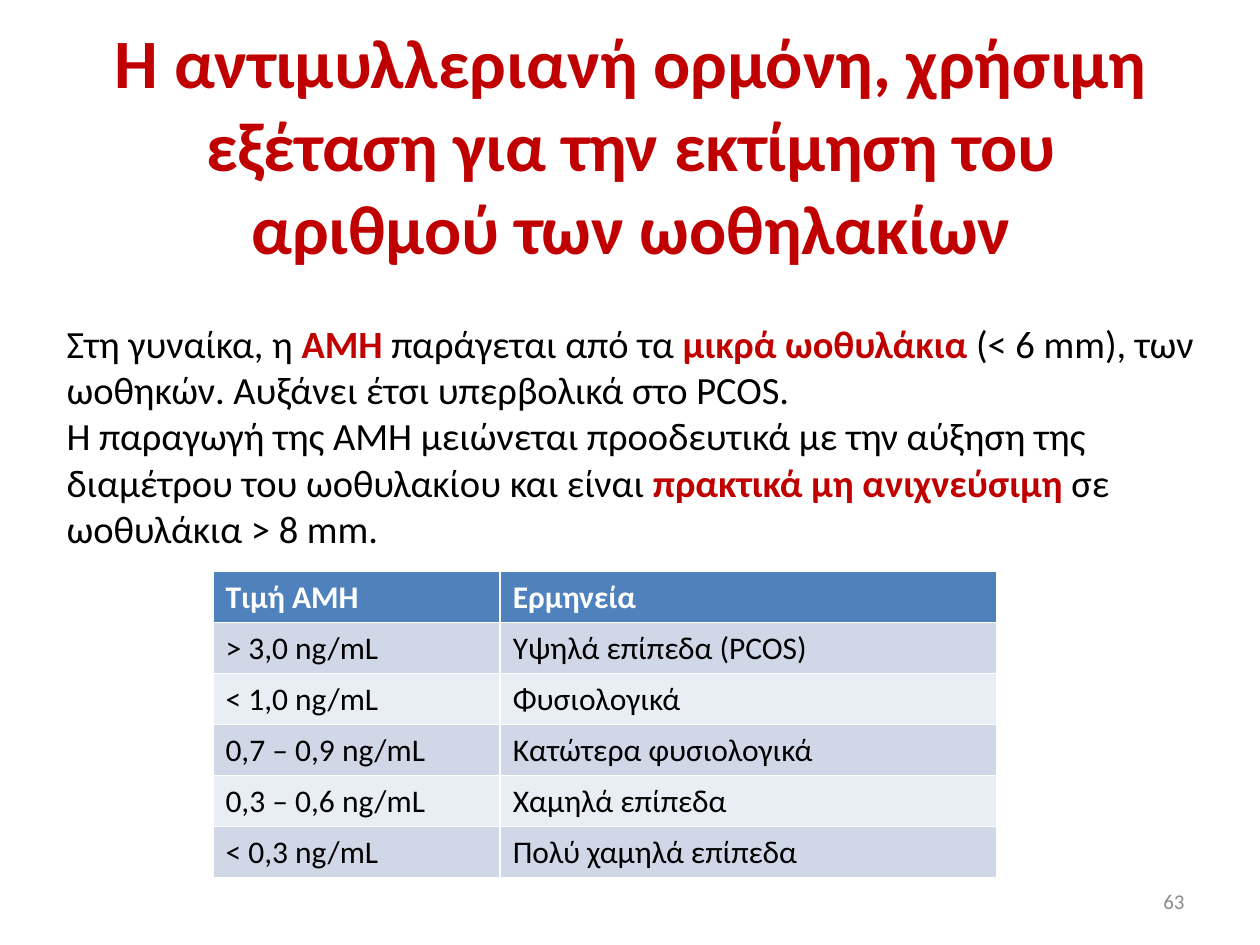
"""Builds the slide on anti-Müllerian hormone values and their meaning."""
from pptx import Presentation, util as u
from pptx.dml.color import RGBColor
from pptx.enum import text

RED = RGBColor(0xC0, 0x00, 0x00)
BLACK = RGBColor(0x00, 0x00, 0x00)
WHITE = RGBColor(0xFF, 0xFF, 0xFF)
GREY = RGBColor(0x8C, 0x8C, 0x8C)
HEADER = RGBColor(0x4F, 0x81, 0xBD)
BANDS = [RGBColor(0xE9, 0xED, 0xF4), RGBColor(0xD0, 0xD8, 0xE8)]

prs = Presentation()
prs.slide_width, prs.slide_height = u.Inches(10), u.Inches(7.5)
W, H = prs.slide_width, prs.slide_height
s = prs.slides.add_slide(prs.slide_layouts[6])


def add_run(p, words, size, color, bold=False):
    r = p.add_run()
    r.text = words
    for name, value in {"name": "Calibri", "size": u.Pt(size), "bold": bold}.items():
        setattr(r.font, name, value)
    r.font.color.rgb = color


def add_text(box, paragraphs, size, align, anchor):
    x, y, w, h = box
    tf = s.shapes.add_textbox(int(x * W), int(y * H), int(w * W), int(h * H)).text_frame
    tf.word_wrap = True
    tf.vertical_anchor = anchor
    for i, runs in enumerate(paragraphs):
        p = tf.add_paragraph() if i else tf.paragraphs[0]
        p.alignment = align
        for words, color, bold in runs:
            add_run(p, words, size, color, bold)


TITLE = "H αντιμυλλεριανή ορμόνη, χρήσιμη εξέταση για την εκτίμηση του αριθμού των ωοθηλακίων"
BODY = [
    [("Στη γυναίκα, η ", BLACK, False),
     ("ΑΜΗ", RED, True),
     (" παράγεται από τα ", BLACK, False),
     ("μικρά ωοθυλάκια ", RED, True),
     ("(< 6 mm), των ωοθηκών. Αυξάνει έτσι υπερβολικά στο PCOS.", BLACK, False)],
    [("Η παραγωγή της ΑΜΗ μειώνεται προοδευτικά με την αύξηση της "
      "διαμέτρου του ωοθυλακίου και είναι ", BLACK, False),
     ("πρακτικά μη ανιχνεύσιμη ", RED, True),
     ("σε ωοθυλάκια > 8 mm.", BLACK, False)],
]
ALIGN, ANCHOR = text.PP_ALIGN, text.MSO_ANCHOR
add_text((0.051, 0.069, 0.9, 0.167), [[(TITLE, RED, True)]], 39.6, ALIGN.CENTER, ANCHOR.MIDDLE)
add_text((0.717, 0.927, 0.233, 0.053), [[("63", GREY, False)]], 12, ALIGN.RIGHT, ANCHOR.MIDDLE)
add_text((0.043, 0.332, 0.921, 0.26), BODY, 22, ALIGN.LEFT, ANCHOR.TOP)

ROWS = [
    ("Tιμή AMH", "Ερμηνεία"),
    ("> 3,0 ng/mL", "Υψηλά επίπεδα (PCOS)"),
    ("< 1,0 ng/mL", "Φυσιολογικά"),
    ("0,7 – 0,9 ng/mL", "Κατώτερα φυσιολογικά"),
    ("0,3 – 0,6 ng/mL", "Χαμηλά επίπεδα"),
    ("< 0,3 ng/mL", "Πολύ χαμηλά επίπεδα"),
]
COLS = [0.228, 0.394]
table = s.shapes.add_table(len(ROWS), len(COLS), int(0.169 * W), int(0.605 * H),
                           int(sum(COLS) * W), int(0.324 * H)).table
for column, share in zip(table.columns, COLS):
    column.width = int(share * W)
for i, row in enumerate(ROWS):
    for j, words in enumerate(row):
        cell = table.cell(i, j)
        cell.fill.solid()
        cell.fill.fore_color.rgb = BANDS[i % 2] if i else HEADER
        add_run(cell.text_frame.paragraphs[0], words, 18, BLACK if i else WHITE, i == 0)

prs.save("out.pptx")
